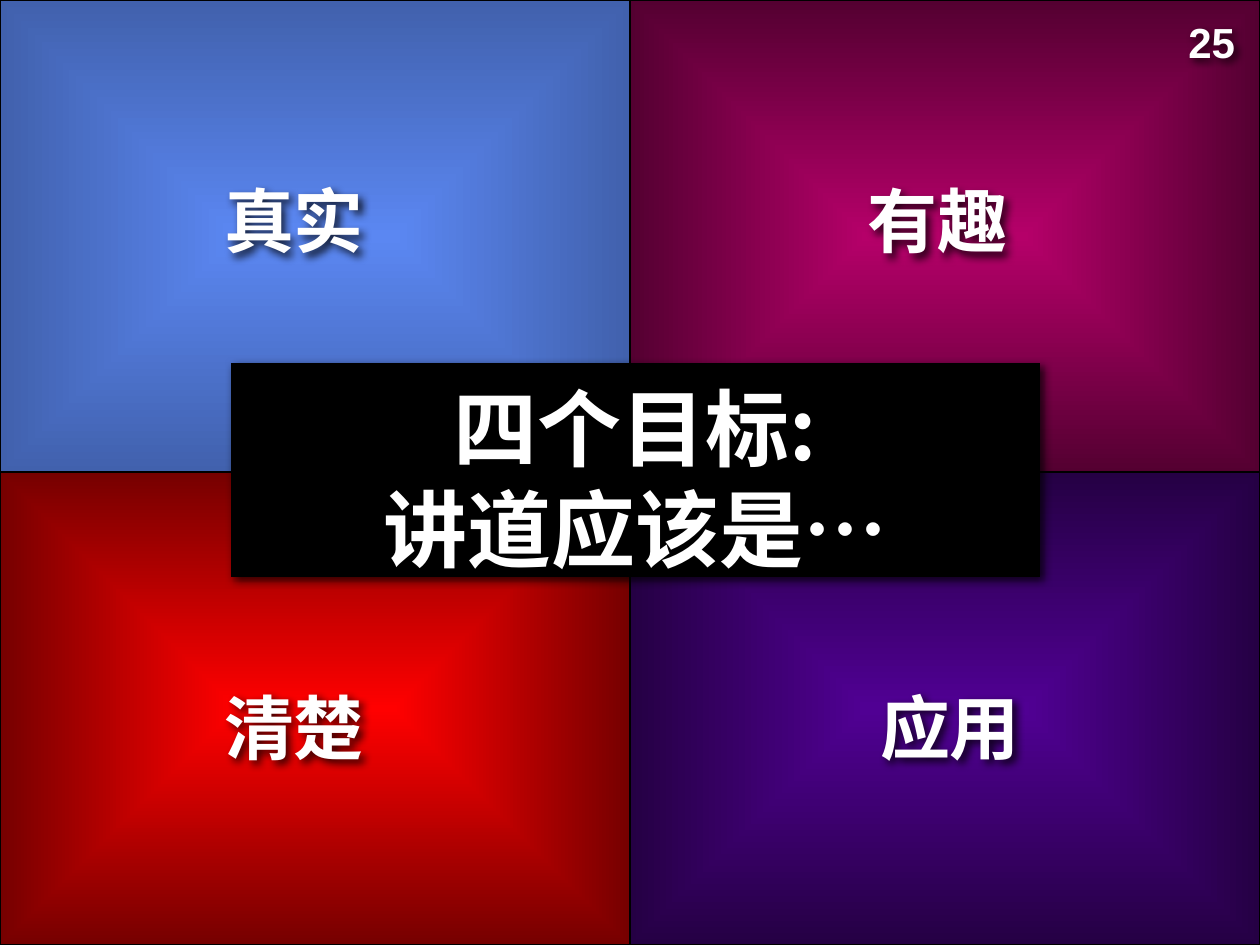
from dataclasses import dataclass

from lxml import etree
from pptx import Presentation
from pptx.dml.color import RGBColor
from pptx.enum.shapes import MSO_SHAPE
from pptx.enum.text import MSO_ANCHOR, MSO_AUTO_SIZE, PP_ALIGN
from pptx.oxml import parse_xml
from pptx.oxml.ns import nsdecls, qn
from pptx.util import Emu, Pt

RECTANGLE = MSO_SHAPE.RECTANGLE
TOP = MSO_ANCHOR.TOP
FIXED_SIZE = MSO_AUTO_SIZE.NONE
CENTER, LEFT = PP_ALIGN.CENTER, PP_ALIGN.LEFT

PX = 914400 / 126
SLIDE_W, SLIDE_H = 1260, 945
TILE_W, TILE_H = 630, 473


def px(length):
    return Emu(round(length * PX))


@dataclass(frozen=True)
class Theme:
    ink: str = "FFFFFF"
    black: str = "000000"
    chinese: str = "Noto Sans CJK TC"
    latin: str = "Arial"
    title_size: int = 48
    label_size: int = 40
    number_size: int = 24
    line_height: float = 1.2


class GoalSlide:
    def __init__(self, deck, theme):
        self.theme = theme
        self.slide = deck.slides.add_slide(deck.slide_layouts[5])

    def shadow(self, shape):
        shape.shadow.inherit = False
        effects = shape.element.spPr.find(qn("a:effectLst"))
        effects.append(parse_xml(
            f'<a:outerShdw {nsdecls("a")} blurRad="63500" dist="38100" dir="2700000">'
            f'<a:srgbClr val="{self.theme.black}"><a:alpha val="75000"/></a:srgbClr>'
            '</a:outerShdw>'))

    def set_text(self, shape, text, size, font, align=CENTER, wrap=True):
        frame = shape.text_frame
        frame.text = text
        frame.word_wrap = wrap
        frame.auto_size = FIXED_SIZE
        frame.vertical_anchor = TOP
        paragraph = frame.paragraphs[0]
        paragraph.alignment = align
        paragraph.space_before = Pt(0)
        paragraph.font.size = Pt(size)
        paragraph.font.bold = True
        paragraph.font.name = font
        paragraph.font.color.rgb = RGBColor.from_string(self.theme.ink)
        if font == self.theme.chinese:
            # Tight line pitch; the top margin grows with the type to keep it centred.
            paragraph.line_spacing = Pt(size * self.theme.line_height)
            frame.margin_top = px(6 + size // 6)
            frame.margin_bottom = 0
            defaults = paragraph._p.pPr.find(qn("a:defRPr"))
            etree.SubElement(defaults, qn("a:ea"), typeface=font)

    def tile(self, column, row, inner, outer):
        """Quarter of the slide, shaded from its centre to its edges."""
        tile = self.slide.shapes.add_shape(
            RECTANGLE, px(column * TILE_W), px(row * (SLIDE_H - TILE_H)),
            px(TILE_W), px(TILE_H))
        tile.shadow.inherit = False
        tile.line.color.rgb = RGBColor.from_string(self.theme.black)
        tile.line.width = Pt(1)
        tile.fill.gradient()
        for stop, color in zip(tile.fill.gradient_stops, (inner, outer)):
            stop.color.rgb = RGBColor.from_string(color)
        gradient = tile.element.spPr.find(qn("a:gradFill"))
        gradient.replace(gradient.find(qn("a:lin")), parse_xml(
            f'<a:path {nsdecls("a")} path="shape">'
            '<a:fillToRect l="50000" t="50000" r="50000" b="50000"/></a:path>'))

    def label(self, text, box, size, font, **layout):
        label = self.slide.shapes.add_textbox(*map(px, box))
        self.shadow(label)
        self.set_text(label, text, size, font, **layout)

    def title(self, text, box):
        title = self.slide.shapes.title
        title.left, title.top, title.width, title.height = map(px, box)
        title.fill.solid()
        title.fill.fore_color.rgb = RGBColor.from_string(self.theme.black)
        self.shadow(title)
        self.set_text(title, text, self.theme.title_size, self.theme.chinese)
        # The title lies over the four tiles.
        self.slide.shapes.element.append(title.element)


def main():
    deck = Presentation()
    deck.slide_width, deck.slide_height = px(SLIDE_W), px(SLIDE_H)
    theme = Theme()
    page = GoalSlide(deck, theme)

    # column, row, centre colour, edge colour, goal, label left, label width
    goals = [
        (0, 0, "5B87F2", "4161AD", "真实", 163, 262),
        (1, 0, "B50069", "540031", "有趣", 688, 499),
        (0, 1, "FF0000", "760000", "清楚", 105, 378),
        (1, 1, "500093", "250044", "应用", 761, 378),
    ]
    for column, row, inner, outer, *_ in goals:
        page.tile(column, row, inner, outer)
    for _, row, _, _, goal, left, width in goals:
        page.label(goal, (left, 166 + row * 506, width, 97),
                   theme.label_size, theme.chinese)

    page.title("四个目标:\v讲道应该是…", (231, 363, 809, 214))
    page.label("25", (1176, 10, 72, 63), theme.number_size, theme.latin,
               align=LEFT, wrap=False)
    deck.save("out.pptx")


if __name__ == "__main__":
    main()
